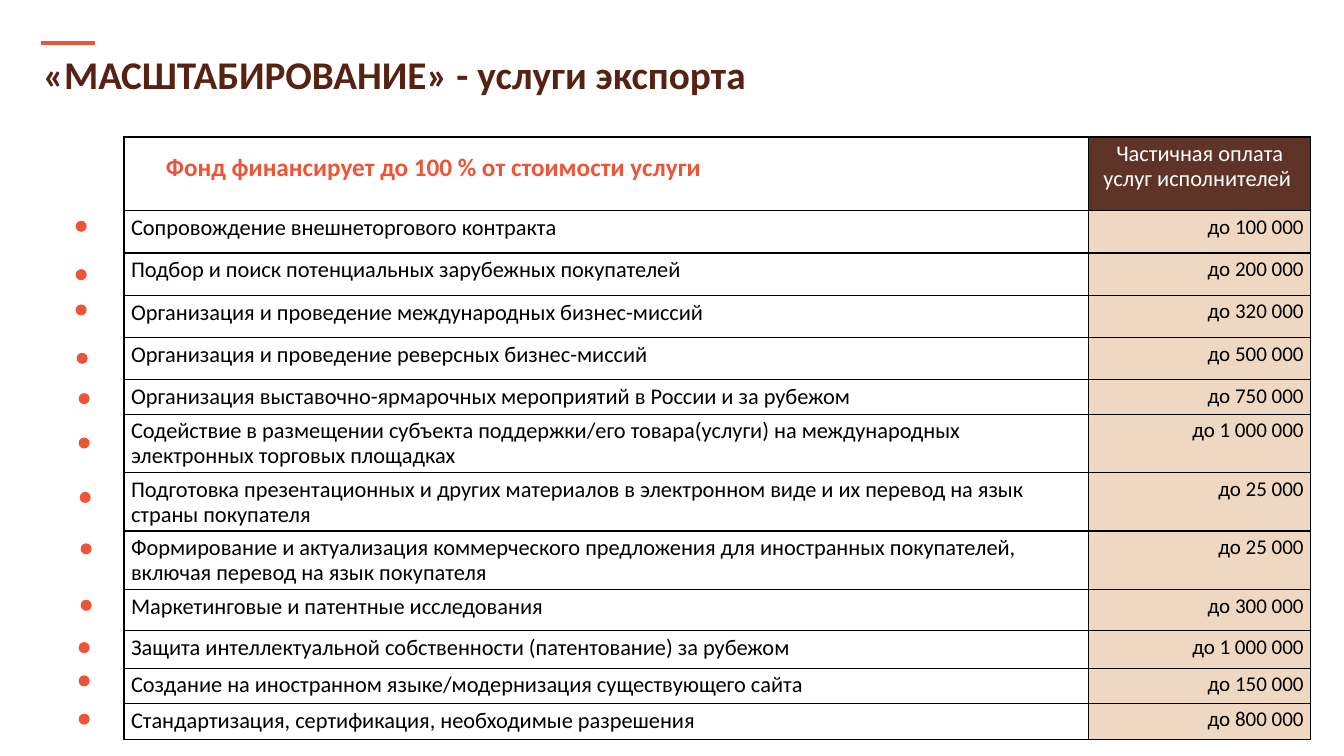
from dataclasses import dataclass

from lxml import etree
from pptx import Presentation
from pptx.dml.color import RGBColor
from pptx.enum.shapes import MSO_CONNECTOR, MSO_SHAPE
from pptx.enum.text import PP_ALIGN
from pptx.oxml.ns import qn
from pptx.util import Pt

LEFT, CENTER, RIGHT = PP_ALIGN.LEFT, PP_ALIGN.CENTER, PP_ALIGN.RIGHT
STRAIGHT, OVAL = MSO_CONNECTOR.STRAIGHT, MSO_SHAPE.OVAL
EMU_PER_PX = 9144


@dataclass(frozen=True)
class Theme:
    font: str = "Calibri"
    accent: str = "ED5539"
    title: str = "562212"
    header: str = "5E3427"
    price: str = "EED8C2"
    black: str = "000000"
    white: str = "FFFFFF"
    title_size: int = 28
    lead_size: int = 18
    body_size: int = 16
    price_size: int = 15


THEME = Theme()
DOT = 11
HEADER_HEIGHT = 73
COLUMN_WIDTHS = (957, 220)

SERVICES = [
    ("Сопровождение внешнеторгового контракта", "до 100 000", 42, (75, 219)),
    ("Подбор и поиск потенциальных зарубежных покупателей", "до 200 000", 42, (75, 267)),
    ("Организация и проведение международных бизнес-миссий", "до 320 000", 42, (75, 302)),
    ("Организация и проведение реверсных бизнес-миссий", "до 500 000", 42, (76, 350)),
    ("Организация выставочно-ярмарочных мероприятий в России и за рубежом",
     "до 750 000", 33, (78, 390)),
    ("Содействие в размещении субъекта поддержки/его товара(услуги) на международных "
     "электронных торговых площадках", "до 1 000 000", 56, (78, 434)),
    ("Подготовка презентационных и других материалов в электронном виде и их перевод "
     "на язык страны покупателя", "до 25 000", 51, (79, 488)),
    ("Формирование и актуализация коммерческого предложения для иностранных покупателей, "
     "включая перевод на язык покупателя", "до 25 000", 57, (80, 539)),
    ("Маркетинговые и патентные исследования", "до 300 000", 41, (80, 595)),
    ("Защита интеллектуальной собственности (патентование) за рубежом",
     "до 1 000 000", 37, (78, 637)),
    ("Создание на иностранном языке/модернизация существующего сайта",
     "до 150 000", 35, (78, 670)),
    ("Стандартизация, сертификация, необходимые разрешения", "до 800 000", 36, (78, 708)),
]


def px(*values):
    return [v * EMU_PER_PX for v in values]


def rgb(color):
    return RGBColor.from_string(color)


def write(tf, text, size=THEME.body_size, color=THEME.black, bold=False,
          align=LEFT, spacing=0.9):
    tf.word_wrap = True
    p = tf.paragraphs[0]
    p.alignment = align
    p.line_spacing = spacing
    r = p.add_run()
    r.text = text
    r.font.name = THEME.font
    r.font.size = Pt(size)
    r.font.bold = bold
    r.font.color.rgb = rgb(color)


def add_text(s, box, text, **fmt):
    write(s.shapes.add_textbox(*px(*box)).text_frame, text, **fmt)


def add_rule(s, x1, y1, x2, y2, color, width):
    line = s.shapes.add_connector(STRAIGHT, *px(x1, y1, x2, y2))
    line.line.color.rgb = rgb(color)
    line.line.width = Pt(width)
    etree.SubElement(line._element.spPr, qn("a:effectLst"))


def add_dot(s, x, y):
    sp = s.shapes.add_shape(OVAL, *px(x, y, DOT, DOT))
    sp.shadow.inherit = False
    sp.fill.solid()
    sp.fill.fore_color.rgb = rgb(THEME.accent)
    sp.line.fill.background()


def format_cell(cell, fill=None):
    cell.margin_left, cell.margin_right, cell.margin_top, cell.margin_bottom = px(7, 7, 5, 5)
    tcPr = cell._tc.get_or_add_tcPr()
    for side in ("lnL", "lnR", "lnT", "lnB"):
        ln = etree.SubElement(tcPr, qn("a:" + side), w=str(Pt(1)))
        solid = etree.SubElement(ln, qn("a:solidFill"))
        etree.SubElement(solid, qn("a:srgbClr"), val=THEME.black)
    if fill:
        cell.fill.solid()
        cell.fill.fore_color.rgb = rgb(fill)
    else:
        cell.fill.background()


def add_price_table(s, x, y):
    heights = [HEADER_HEIGHT] + [height for _, _, height, _ in SERVICES]
    box = px(x, y, sum(COLUMN_WIDTHS), sum(heights))
    table = s.shapes.add_table(len(heights), len(COLUMN_WIDTHS), *box).table
    table.first_row = table.horz_banding = False
    for column, width in zip(table.columns, px(*COLUMN_WIDTHS)):
        column.width = width
    for row, height in zip(table.rows, px(*heights)):
        row.height = height

    format_cell(table.cell(0, 0))
    head = table.cell(0, 1)
    format_cell(head, THEME.header)
    write(head.text_frame, "Частичная оплата услуг исполнителей ",
          color=THEME.white, align=CENTER)
    for i, (service, price, _, _) in enumerate(SERVICES, 1):
        name, amount = table.cell(i, 0), table.cell(i, 1)
        format_cell(name)
        write(name.text_frame, service)
        format_cell(amount, THEME.price)
        write(amount.text_frame, price, size=THEME.price_size, align=RIGHT)


def main():
    prs = Presentation()
    prs.slide_width, prs.slide_height = px(1333, 750)
    s = prs.slides.add_slide(prs.slide_layouts[6])
    add_rule(s, 41, 43, 94, 43, THEME.accent, 3)
    add_text(s, (33, 50, 1044, 90), "«МАСШТАБИРОВАНИЕ» - услуги экспорта",
             size=THEME.title_size, color=THEME.title, bold=True)
    add_price_table(s, 123, 136)
    for _, _, _, dot in SERVICES:
        add_dot(s, *dot)
    add_text(s, (97, 145, 666, 70), "Фонд финансирует до 100 % от стоимости услуги",
             size=THEME.lead_size, color=THEME.accent, bold=True, align=CENTER, spacing=1.0)
    prs.save("out.pptx")


if __name__ == "__main__":
    main()
